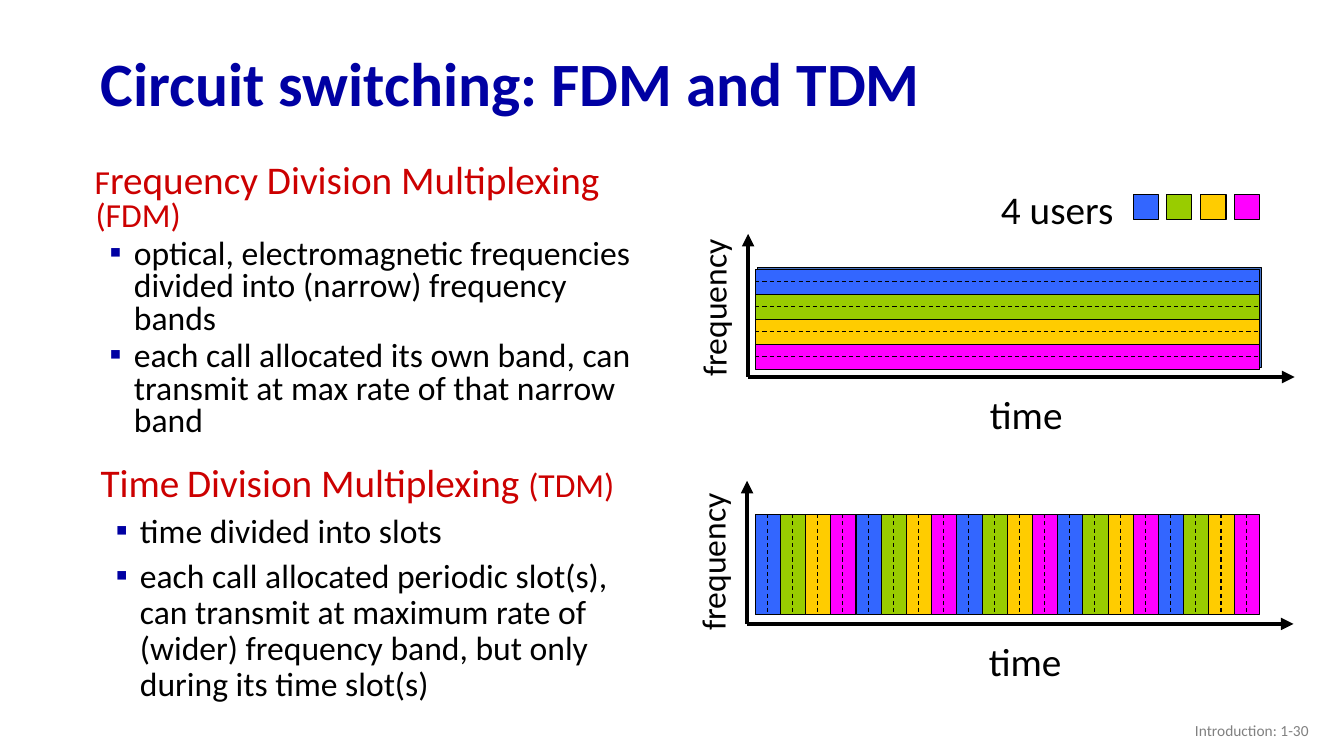
from lxml.etree import SubElement
from pptx import Presentation
from pptx.dml.color import RGBColor
from pptx.enum.dml import MSO_LINE
from pptx.enum.shapes import MSO_CONNECTOR, MSO_SHAPE
from pptx.enum.text import MSO_ANCHOR, PP_ALIGN
from pptx.oxml.ns import qn
from pptx.util import Pt

PX = 9144  # 100 px to the inch
FONT = "Calibri"
BLACK = RGBColor(0x00, 0x00, 0x00)
NAVY = RGBColor(0x00, 0x00, 0xA3)
RED = RGBColor(0xCC, 0x00, 0x00)
GREY = RGBColor(0x80, 0x80, 0x80)
BACKING = RGBColor(0x44, 0x72, 0xC4)
USERS = [
    RGBColor(0x33, 0x66, 0xFF),
    RGBColor(0x99, 0xCC, 0x00),
    RGBColor(0xFF, 0xCC, 0x00),
    RGBColor(0xFF, 0x00, 0xFF),
]
BAND = 25
SLOTS = 20

FDM_HEADING = [("F", 24), ("requency Division Multiplexing ", 28), ("(FDM)", 24)]
FDM_POINTS = [
    "optical, electromagnetic frequencies divided into (narrow) frequency bands",
    "each call allocated its own band, can transmit at max rate of that narrow band",
]
TDM_HEADING = [("Time", 28), (" ", 24), ("Division Multiplexing ", 28), ("(TDM)", 24)]
TDM_POINTS = [
    "time divided into slots",
    "each call allocated periodic slot(s), can transmit at maximum rate of "
    "(wider) frequency band, but only during its time slot(s)",
]


def emu(*lengths):
    return [n * PX for n in lengths]


def add_run(p, text, size, color, bold=False):
    r = p.add_run()
    r.text = text
    for key, value in {"name": FONT, "size": Pt(size), "bold": bold}.items():
        setattr(r.font, key, value)
    r.font.color.rgb = color


def add_label(s, box, text, size, color=BLACK, rotation=0, **paragraph_format):
    sp = s.shapes.add_textbox(*emu(*box))
    sp.rotation = rotation
    sp.text_frame.word_wrap = False
    p = sp.text_frame.paragraphs[0]
    for key, value in paragraph_format.items():
        setattr(p, key, value)
    add_run(p, text, size, color)
    return sp


def add_rect(s, box, color):
    sp = s.shapes.add_shape(MSO_SHAPE.RECTANGLE, *emu(*box))
    sp.shadow.inherit = False
    sp.fill.solid()
    sp.fill.fore_color.rgb = color
    sp.line.color.rgb = BLACK
    sp.line.width = Pt(0.75)


def add_line(s, start, end, width=0.75, dash=None, arrow=False):
    line = s.shapes.add_connector(MSO_CONNECTOR.STRAIGHT, *emu(*start, *end))
    line.line.color.rgb = BLACK
    line.line.width = Pt(width)
    line.line.dash_style = dash
    if arrow:
        SubElement(line.line._get_or_add_ln(), qn("a:tailEnd"), type="triangle")
    SubElement(line._element.spPr, qn("a:effectLst"))


def add_title(s, box):
    title = s.shapes.title
    title.left, title.top, title.width, title.height = emu(*box)
    tf = title.text_frame
    tf.vertical_anchor = MSO_ANCHOR.MIDDLE
    p = tf.paragraphs[0]
    p.alignment = PP_ALIGN.LEFT
    p.line_spacing = 0.9
    add_run(p, "Circuit switching: FDM and TDM", 44, NAVY, bold=True)


def set_indent(p, left, hanging):
    pPr = p._p.get_or_add_pPr()
    pPr.set("marL", str(left * PX))
    pPr.set("indent", str(-hanging * PX))
    return pPr


def add_bullet(pPr):
    SubElement(SubElement(pPr, qn("a:buClr")), qn("a:srgbClr"), val=str(NAVY))
    SubElement(pPr, qn("a:buFont"), typeface=FONT)
    SubElement(pPr, qn("a:buChar"), char="▪")


def add_section(s, box, heading, points, line_spacing, space_before):
    """Place a red heading of mixed sizes above its bulleted points."""
    tf = s.shapes.add_textbox(*emu(*box)).text_frame
    tf.word_wrap = True
    for i in range(len(points) + 1):
        p = tf.add_paragraph() if i else tf.paragraphs[0]
        p.line_spacing = line_spacing
        p.space_before = Pt(space_before)
        if i:
            add_bullet(set_indent(p, 39, 24))
            add_run(p, points[i - 1], 24, BLACK)
        else:
            set_indent(p, 1, 1)
            for text, size in heading:
                add_run(p, text, size, RED)


def add_axes(s, x, y, label_rise):
    """Draw both axes from the origin x, y, with their labels."""
    add_line(s, (x, y), (x, y - 142), 3, arrow=True)
    add_line(s, (x, y), (x + 542, y), 3, arrow=True)
    add_label(s, (x - 113, y - label_rise, 158, 51), "frequency", 24, rotation=270)
    add_label(s, (x + 230, y + 8, 93, 57), "time", 28)


def add_fdm_plot(s, x, y, w, h):
    add_axes(s, x - 7, y + h + 7, 95)
    add_rect(s, (x + 2, y - 2, w, h), BACKING)
    for i, color in enumerate(USERS):
        top = y + i * BAND
        add_rect(s, (x, top, w, BAND), color)
        middle = top + BAND // 2
        add_line(s, (x, middle), (x + w, middle), dash=MSO_LINE.DASH)


def add_tdm_plot(s, x, y, w, h):
    add_axes(s, x - 8, y + h + 9, 88)
    slot = w // SLOTS
    for i in range(SLOTS):
        left = x + i * slot
        add_rect(s, (left, y, slot, h), USERS[i % len(USERS)])
        middle = left + slot // 2
        add_line(s, (middle, y), (middle, y + h), dash=MSO_LINE.DASH)


def add_legend(s, x, y):
    add_label(s, (x, y, 133, 57), "4 users", 28)
    for i, color in enumerate(USERS):
        add_rect(s, (x + 141 + round(i * 100 / 3), y + 14, 25, 25), color)


def add_footer(s, box):
    sp = add_label(s, box, "Introduction: 1-30", 11, GREY, alignment=PP_ALIGN.RIGHT)
    sp.text_frame.word_wrap = True
    sp.text_frame.vertical_anchor = MSO_ANCHOR.MIDDLE


def main():
    prs = Presentation()
    prs.slide_width, prs.slide_height = emu(1333, 750)
    s = prs.slides.add_slide(prs.slide_layouts[5])
    add_title(s, (90, 37, 1150, 98))
    add_section(s, (84, 158, 576, 314), FDM_HEADING, FDM_POINTS, 0.8, 4)
    add_section(s, (90, 455, 577, 270), TDM_HEADING, TDM_POINTS, 0.9, 6)
    add_legend(s, 983, 179)
    add_fdm_plot(s, 749, 267, 500, 100)
    add_tdm_plot(s, 749, 510, 500, 100)
    add_footer(s, (1008, 705, 300, 40))
    prs.save("out.pptx")


if __name__ == "__main__":
    main()
